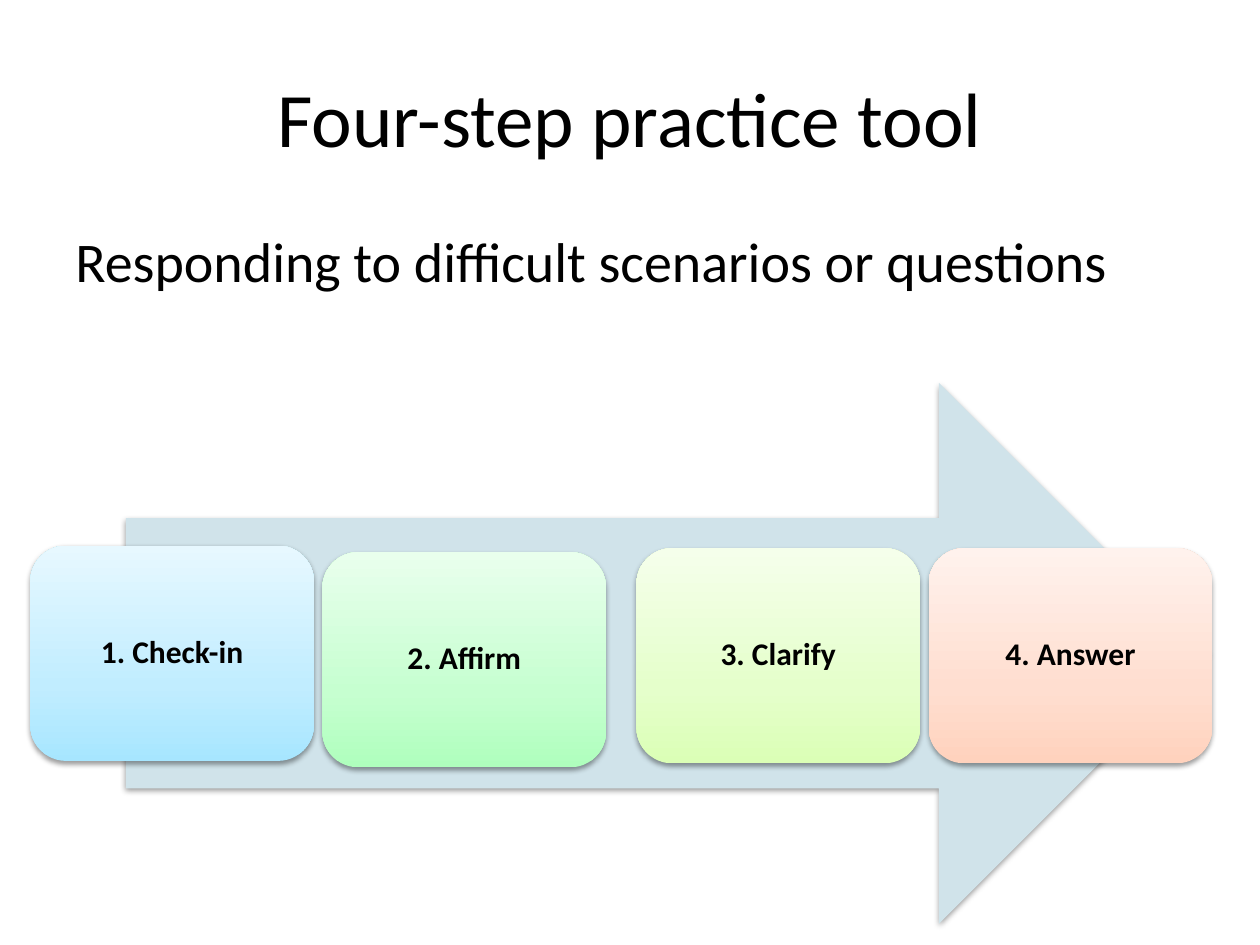
import copy
import dataclasses

import lxml.etree
import pptx
import pptx.dml.color
import pptx.enum.shapes
import pptx.enum.text
import pptx.oxml.ns
import pptx.util

Cm = pptx.util.Cm
SHAPE = pptx.enum.shapes.MSO_SHAPE
ALIGN = pptx.enum.text.PP_ALIGN
ANCHOR = pptx.enum.text.MSO_ANCHOR

COLORS = {
    "text": "000000",
    "shadow": "000000",
    "arrow": "D0E3EA",
}
GRADIENTS = {
    "blue": ("A7E6FF", "C1EDFF", "E7F8FF"),
    "green": ("AFFFBD", "C6FFD0", "E9FFED"),
    "lime": ("DBFFB6", "E5FFCB", "F5FFEB"),
    "orange": ("FFD2BD", "FFDED0", "FFF2ED"),
}
STOPS = (0, 0.35, 1)
STEP_W, STEP_H = 5.72, 4.34


@dataclasses.dataclass
class Step:
    label: str
    gradient: str
    left: float
    top: float


STEPS = [
    Step("1. Check-in", "blue", 0.61, 11.0),
    Step("2. Affirm", "green", 6.5, 11.13),
    Step("3. Clarify", "lime", 12.83, 11.05),
    Step("4. Answer", "orange", 18.72, 11.05),
]


def rgb(value: str) -> pptx.dml.color.RGBColor:
    return pptx.dml.color.RGBColor.from_string(value)


def write(sp, text: str, *, size: float, bold: bool = False,
          align=ALIGN.LEFT, anchor=ANCHOR.TOP, spacing: float = 1.0) -> None:
    tf = sp.text_frame
    tf.word_wrap = True
    tf.vertical_anchor = anchor
    p = tf.paragraphs[0]
    p.alignment = align
    p.line_spacing = spacing
    r = p.add_run()
    r.text = text
    r.font.name = "Calibri"
    r.font.size = pptx.util.Pt(size)
    r.font.bold = bold
    r.font.color.rgb = rgb(COLORS["text"])


def add_shadow(sp) -> None:
    qn = pptx.oxml.ns.qn
    sp.shadow.inherit = False
    effects = sp._element.spPr.find(qn("a:effectLst"))
    shadow = lxml.etree.SubElement(
        effects, qn("a:outerShdw"), blurRad="40000", dist="20000",
        dir="5400000", rotWithShape="0")
    color = lxml.etree.SubElement(shadow, qn("a:srgbClr"), val=COLORS["shadow"])
    lxml.etree.SubElement(color, qn("a:alpha"), val="38000")


def add_shape(s, kind, left: float, top: float, width: float, height: float):
    sp = s.shapes.add_shape(kind, Cm(left), Cm(top), Cm(width), Cm(height))
    sp.line.fill.background()
    add_shadow(sp)
    return sp


def fill_gradient(sp, colors: tuple[str, ...]) -> None:
    sp.fill.gradient()
    sp.fill.gradient_angle = 90
    stops = sp._element.spPr.find(".//" + pptx.oxml.ns.qn("a:gsLst"))
    stops.append(copy.deepcopy(stops[-1]))
    for stop, color, position in zip(sp.fill.gradient_stops, colors, STOPS):
        stop.color.rgb = rgb(color)
        stop.position = position


def add_step(s, step: Step) -> None:
    sp = add_shape(s, SHAPE.ROUNDED_RECTANGLE, step.left, step.top, STEP_W, STEP_H)
    fill_gradient(sp, GRADIENTS[step.gradient])
    write(sp, step.label, size=18, bold=True, align=ALIGN.CENTER,
          anchor=ANCHOR.MIDDLE, spacing=0.9)


def main() -> None:
    """Build the four-step practice tool slide."""
    prs = pptx.Presentation()
    prs.slide_width, prs.slide_height = Cm(25.4), Cm(19.05)
    s = prs.slides.add_slide(prs.slide_layouts[6])

    title = s.shapes.add_textbox(Cm(1.27), Cm(0.76), Cm(22.86), Cm(3.18))
    write(title, "Four-step practice tool", size=44, align=ALIGN.CENTER,
          anchor=ANCHOR.MIDDLE)
    body = s.shapes.add_textbox(Cm(1.27), Cm(4.45), Cm(22.86), Cm(12.57))
    write(body, "Responding to difficult scenarios or questions", size=32)

    arrow = add_shape(s, SHAPE.RIGHT_ARROW, 2.54, 7.72, 21.84, 10.9)
    arrow.fill.solid()
    arrow.fill.fore_color.rgb = rgb(COLORS["arrow"])
    for step in STEPS:
        add_step(s, step)

    prs.save("out.pptx")


if __name__ == "__main__":
    main()
